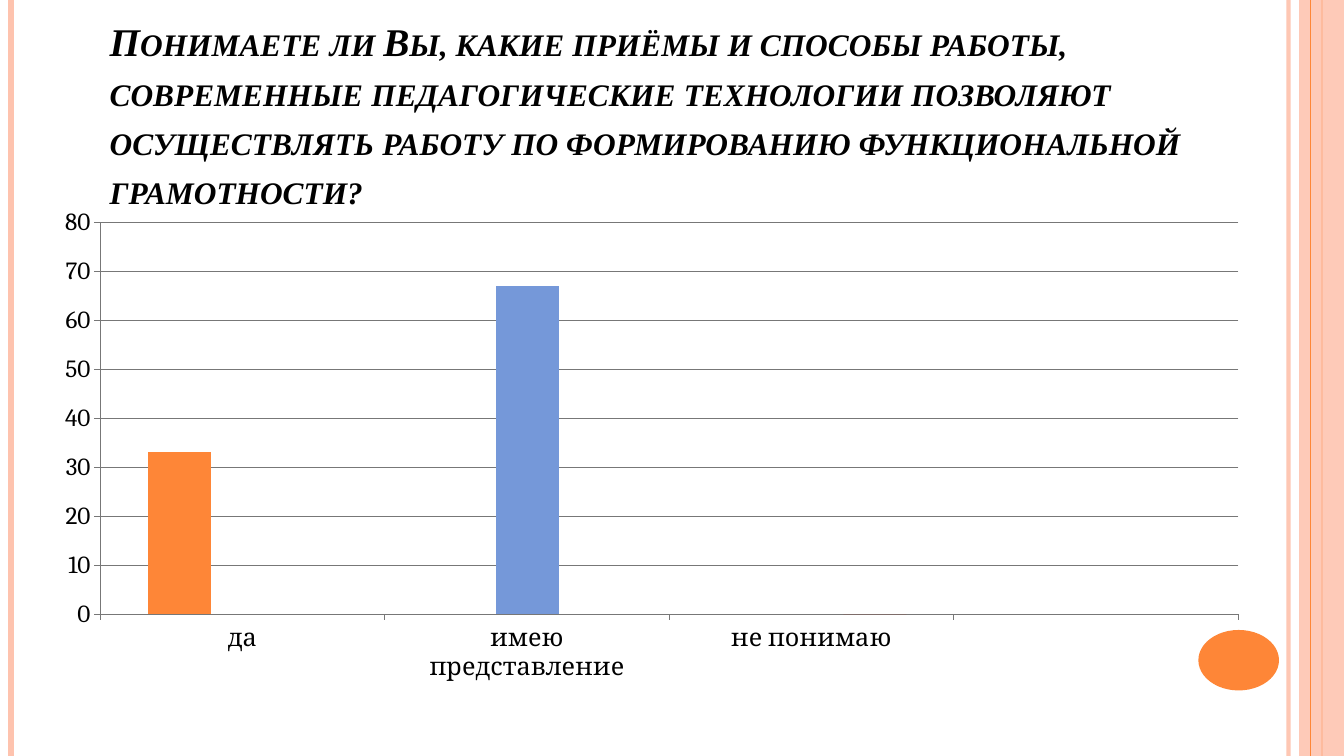
from dataclasses import dataclass

from lxml import etree
from pptx import Presentation
from pptx import util as u
from pptx.chart.data import CategoryChartData
from pptx.dml.color import RGBColor
from pptx.enum import chart as ch, shapes, text
from pptx.oxml import parse_xml
from pptx.oxml.ns import nsdecls, qn

Pt = u.Pt


@dataclass(frozen=True)
class Theme:
    orange: str = "FE8637"
    peach: str = "FEC3AE"
    blue: str = "7598D9"
    red: str = "B32C16"
    black: str = "000000"
    grid: str = "777777"
    title_font: str = "Times New Roman"
    chart_font: str = "Cambria"
    title_size: int = 28
    chart_size: int = 18


T = Theme()
WIDTH, HEIGHT = 960, 540
TITLE = ("Понимаете ли Вы, какие приёмы и способы работы, современные "
         "педагогические технологии позволяют осуществлять работу по "
         "формированию функциональной грамотности?")
CATEGORIES = ["да", "имею представление", "не понимаю", ""]
SERIES = [("Series 1", [33, None, None, None], T.orange),
          ("Series 2", [None, 67, None, None], T.blue),
          ("Series 3", [None, None, 0, None], T.red)]


def rgb(color):
    return RGBColor.from_string(color)


def set_alpha(fill, percent):
    """Make the solid colour inside a fill or line partly transparent."""
    color = fill.find(".//" + qn("a:srgbClr"))
    etree.SubElement(color, qn("a:alpha"), val=str(percent * 1000))


def add_filled(s, kind, box, color):
    sp = s.shapes.add_shape(kind, *map(Pt, box))
    sp.shadow.inherit = False
    sp.fill.solid()
    sp.fill.fore_color.rgb = rgb(color)
    sp.line.fill.background()
    return sp


def add_stripe(s, x, top, height, color, weight):
    cn = s.shapes.add_connector(shapes.MSO_CONNECTOR.STRAIGHT,
                                Pt(x), Pt(top), Pt(x), Pt(top + height))
    cn.line.color.rgb = rgb(color)
    cn.line.width = Pt(weight)
    etree.SubElement(cn._element.spPr, qn("a:effectLst"))
    return cn


def add_frame(s, left, top, width, height):
    """Stripes along both edges and the page-number disc."""
    right = left + width
    inner = add_stripe(s, right - 39.6, top, height, T.peach, 3)
    set_alpha(inner._element.spPr, 93)
    add_stripe(s, left + 8, top, height, T.peach, 4.5)
    add_stripe(s, right - 16, top, height, T.orange, 1.5)
    band = add_filled(s, shapes.MSO_SHAPE.RECTANGLE,
                      (right - 32, top, 32, height), T.peach)
    set_alpha(band._element.spPr, 87)
    add_stripe(s, right - 24, top, height, T.orange, 0.75)
    add_filled(s, shapes.MSO_SHAPE.OVAL,
               (right - 104, top + height - 90, 57.6, 43.2), T.orange)


def add_title(s, left, top, width, height):
    tf = s.shapes.add_textbox(Pt(left), Pt(top), Pt(width), Pt(height)).text_frame
    tf.word_wrap = True
    tf.vertical_anchor = text.MSO_ANCHOR.BOTTOM
    p = tf.paragraphs[0]
    p.text = TITLE
    p.line_spacing = 1.05
    font = p.runs[0].font
    font.name, font.size = T.title_font, Pt(T.title_size)
    font.bold = font.italic = True
    font.color.rgb = rgb(T.black)
    p.runs[0]._r.get_or_add_rPr().set("cap", "small")


def set_plot_area(chart, **fractions):
    """Fix the inner plot area as fractions of the chart box."""
    area = chart._chartSpace.chart.plotArea
    for old in area.findall(qn("c:layout")):
        area.remove(old)
    modes = '<c:xMode val="edge"/><c:yMode val="edge"/>'
    sizes = "".join(f'<c:{k} val="{v}"/>' for k, v in fractions.items())
    area.insert(0, parse_xml(
        f'<c:layout {nsdecls("c")}><c:manualLayout><c:layoutTarget val="inner"/>'
        f'{modes}{sizes}</c:manualLayout></c:layout>'))


def add_answers_chart(s, left, top, width, height):
    data = CategoryChartData()
    data.categories = CATEGORIES
    for name, values, _ in SERIES:
        data.add_series(name, values)
    chart = s.shapes.add_chart(ch.XL_CHART_TYPE.COLUMN_CLUSTERED, Pt(left), Pt(top),
                               Pt(width), Pt(height), data).chart
    chart.has_legend = chart.has_title = False
    chart.font.name, chart.font.size = T.chart_font, Pt(T.chart_size)
    chart.font.color.rgb = rgb(T.black)

    # Columns
    plot = chart.plots[0]
    plot.gap_width, plot.overlap, plot.vary_by_categories = 150, 0, False
    for series, (_, _, color) in zip(plot.series, SERIES):
        series.format.fill.solid()
        series.format.fill.fore_color.rgb = rgb(color)

    # Axes and gridlines
    axis = chart.value_axis
    axis.minimum_scale, axis.maximum_scale, axis.major_unit = 0, 80, 10
    axis.has_major_gridlines = True
    for part in (axis, chart.category_axis, axis.major_gridlines):
        part.format.line.color.rgb = rgb(T.grid)
        part.format.line.width = Pt(0.75)
    for part in (axis, chart.category_axis):
        part.major_tick_mark = ch.XL_TICK_MARK.OUTSIDE
    set_plot_area(chart, x=0.052, y=0.044, w=0.937, h=0.837)


def main():
    prs = Presentation()
    prs.slide_width, prs.slide_height = Pt(WIDTH), Pt(HEIGHT)
    s = prs.slides.add_slide(prs.slide_layouts[6])
    add_frame(s, 0, 0, WIDTH, HEIGHT)
    add_title(s, 71.3, 65.5, 784, 90)
    add_answers_chart(s, 26.6, 144, 867.6, 342.7)
    prs.save("out.pptx")


if __name__ == "__main__":
    main()
